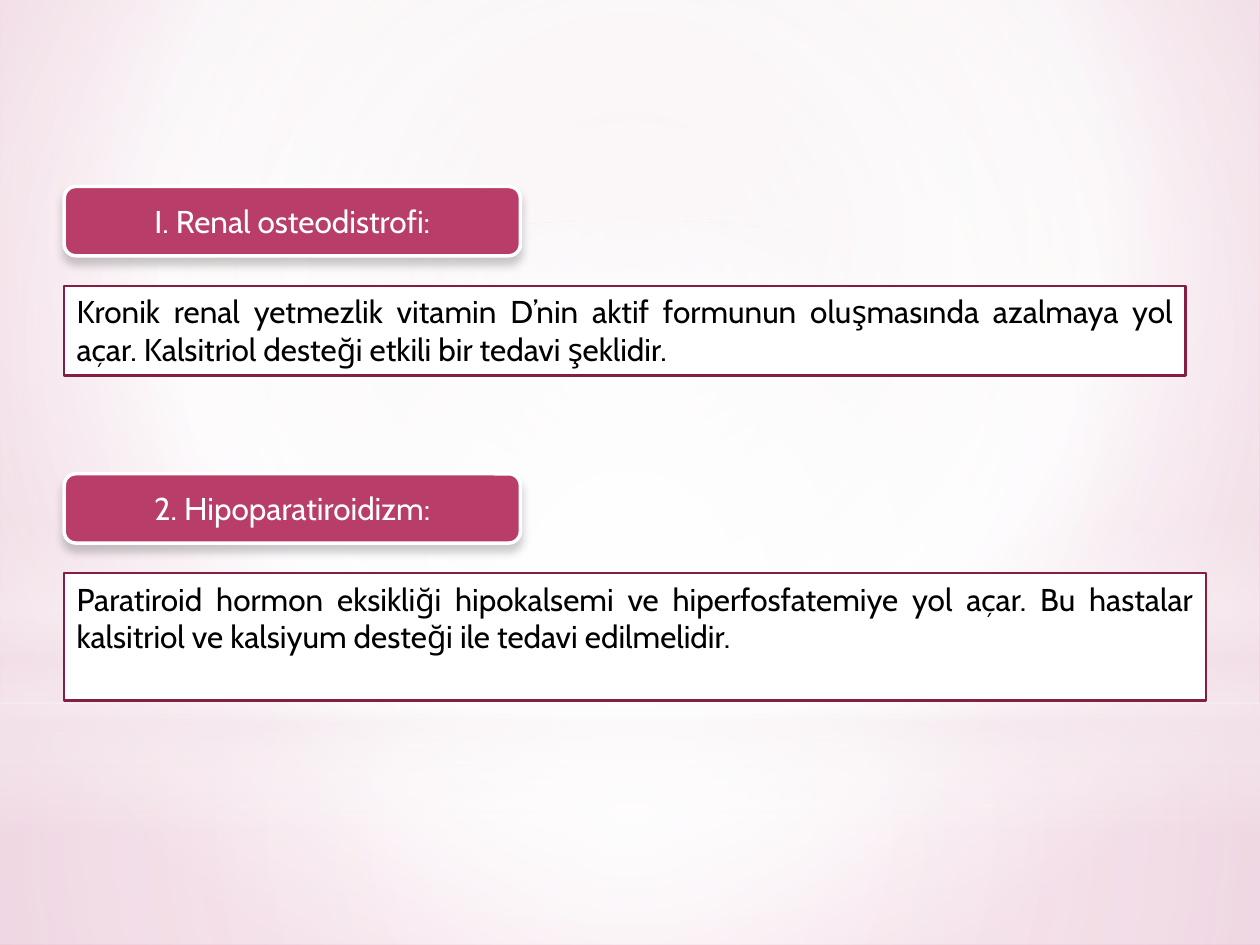
"""Build a slide on two conditions treated with calcitriol."""
from lxml import etree
from pptx import Presentation
from pptx import util as u
from pptx.dml.color import RGBColor
from pptx.enum import shapes, text
from pptx.oxml.ns import qn

FONT = "Cabin"
CENTRE = (50, 50, 50, 50)
BACKGROUND = [(0, "EDDAE2", 100), (60, "FFFFFF", 100), (100, "E09DBC", 100)]
RECT, OVAL = shapes.MSO_SHAPE.RECTANGLE, shapes.MSO_SHAPE.OVAL
GLOWS = [
    (RECT, 5.58, 1.92, [(0, "FFFFFF", 91), (37, "FFFFFF", 76), (100, "F4E7ED", 79)], CENTRE),
    (RECT, 0, 5.58, [(0, "FFFFFF", 89), (48, "FFFFFF", 62), (100, "F4E7ED", 79)], CENTRE),
    (RECT, 4.12, 2.5, [(0, "FFFFFF", 0), (29, "FFFFFF", 30), (45, "F4E7ED", 40),
                       (55, "FFFFFF", 26), (65, "F4E7ED", 60), (100, "FFFFFF", 0)], None),
    (OVAL, 1.75, 5.58, [(0, "FFFFFF", 100), (56, "FFFFFF", 0)], CENTRE),
]
SECTIONS = [
    (1.48, "I. Renal osteodistrofi:", 8.9, 0.71,
     "Kronik renal yetmezlik vitamin D’nin aktif formunun oluşmasında azalmaya yol açar. "
     "Kalsitriol desteği etkili bir tedavi şeklidir."),
    (3.76, "2. Hipoparatiroidizm:", 9.06, 1.01,
     "Paratiroid hormon eksikliği hipokalsemi ve hiperfosfatemiye yol açar. "
     "Bu hastalar kalsitriol ve kalsiyum desteği ile tedavi edilmelidir."),
]
LEFT, LABEL_WIDTH, LABEL_HEIGHT, BODY_OFFSET = 0.51, 3.62, 0.55, 0.79


def color(value):
    return RGBColor.from_string(value)


def node(parent, tag, **attributes):
    return etree.SubElement(parent, qn(tag), {k: str(v) for k, v in attributes.items()})


def add_color(parent, value, opacity):
    node(node(parent, "a:srgbClr", val=value), "a:alpha", val=opacity * 1000)


def set_gradient(owner, stops, focus):
    owner_fill = next(owner.element.iter(qn("a:gradFill")))
    for child in list(owner_fill):
        owner_fill.remove(child)
    stop_list = node(owner_fill, "a:gsLst")
    for position, value, opacity in stops:
        add_color(node(stop_list, "a:gs", pos=position * 1000), value, opacity)
    if focus:
        sides = {side: share * 1000 for side, share in zip("ltrb", focus)}
        node(node(owner_fill, "a:path", path="circle"), "a:fillToRect", **sides)
    else:
        node(owner_fill, "a:lin", ang=90 * 60000, scaled=0)


def add_shape(slide, kind, left, top, width, height):
    shape = slide.shapes.add_shape(kind, *map(u.Inches, (left, top, width, height)))
    shape.shadow.inherit = False
    return shape


def add_box(slide, kind, place, words, fill, line, line_width, ink, align, anchor):
    box = add_shape(slide, kind, *place)
    box.fill.solid()
    box.fill.fore_color.rgb = color(fill)
    box.line.color.rgb = color(line)
    box.line.width = u.Pt(line_width)
    frame = box.text_frame
    frame.word_wrap = True
    frame.vertical_anchor = anchor
    para = frame.paragraphs[0]
    para.text = words
    para.alignment = align
    para.font.name = FONT
    para.font.size = u.Pt(18)
    para.font.color.rgb = color(ink)
    return box


def add_shadow(box):
    effects = box.element.spPr.find(qn("a:effectLst"))
    shadow = node(effects, "a:outerShdw", blurRad=u.Pt(5), dist=u.Pt(4),
                  dir=90 * 60000, rotWithShape=0)
    add_color(shadow, "000000", 20)


def main():
    deck = Presentation()
    deck.slide_width, deck.slide_height = u.Inches(10), u.Inches(7.5)
    slide = deck.slides.add_slide(deck.slide_layouts[6])
    slide.background.fill.gradient()
    set_gradient(slide, BACKGROUND, (20, 10, 20, 60))
    for kind, top, height, stops, focus in GLOWS:
        glow = add_shape(slide, kind, 0, top, 10, height)
        glow.line.fill.background()
        glow.fill.gradient()
        set_gradient(glow, stops, focus)
    for top, label, width, height, body in SECTIONS:
        add_box(slide, RECT, (LEFT, top + BODY_OFFSET, width, height), body,
                "FFFFFF", "841E42", 1.25, "000000",
                text.PP_ALIGN.JUSTIFY, text.MSO_ANCHOR.TOP)
        heading = add_box(slide, shapes.MSO_SHAPE.ROUNDED_RECTANGLE,
                          (LEFT, top, LABEL_WIDTH, LABEL_HEIGHT), label,
                          "B83D68", "FFFFFF", 2, "FFFFFF",
                          text.PP_ALIGN.CENTER, text.MSO_ANCHOR.MIDDLE)
        add_shadow(heading)
    deck.save("out.pptx")


if __name__ == "__main__":
    main()
